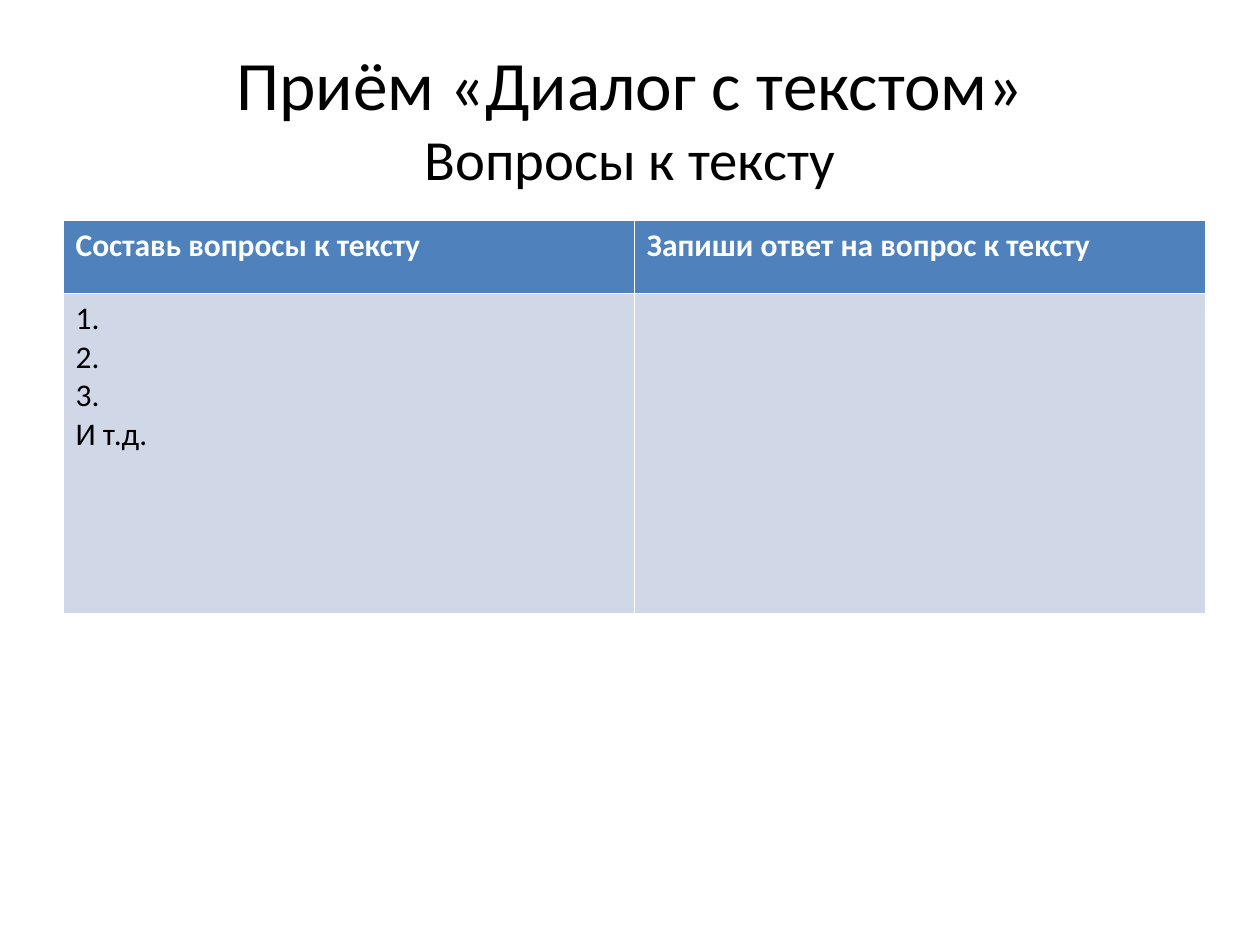
from pptx import Presentation
from pptx.dml.color import RGBColor
from pptx.enum.text import MSO_ANCHOR, MSO_AUTO_SIZE, PP_ALIGN
from pptx.util import Inches, Pt

COLORS = {
    "title": "000000",
    "header_fill": "4F81BD",
    "header_text": "FFFFFF",
    "body_fill": "D0D8E8",
    "body_text": "000000",
}
FONT = "Calibri"
WIDTH, HEIGHT = Inches(10), Inches(7.5)
MARGIN = WIDTH * 0.05
HEADINGS = ["Составь вопросы к тексту", "Запиши ответ на вопрос к тексту"]
ANSWERS = ["1.\n2.\n3.\nИ т.д.", ""]
ROW_HEIGHTS = [0.58, 2.54]


def color(name):
    return RGBColor.from_string(COLORS[name])


def style_font(font, color_name):
    font.name = FONT
    font.color.rgb = color(color_name)


def add_title(slide, lines):
    title = slide.shapes.title
    title.left, title.top = int(MARGIN), int(HEIGHT * 0.04)
    title.width, title.height = int(WIDTH * 0.9), Inches(1.25)
    frame = title.text_frame
    frame.auto_size = MSO_AUTO_SIZE.NONE
    frame.vertical_anchor = MSO_ANCHOR.MIDDLE
    heading = frame.paragraphs[0]
    heading.alignment = PP_ALIGN.CENTER
    style_font(heading.font, "title")
    for index, (words, size) in enumerate(lines):
        if index:
            heading.add_line_break()
        line = heading.add_run()
        line.text = words
        line.font.size = Pt(size)


def fill_cell(cell, words, role, bold):
    cell.fill.solid()
    cell.fill.fore_color.rgb = color(f"{role}_fill")
    cell.text = words
    for paragraph in cell.text_frame.paragraphs:
        style_font(paragraph.font, f"{role}_text")
        paragraph.font.size = Pt(18)
        paragraph.font.bold = bold


def add_question_table(slide):
    frame = slide.shapes.add_table(
        len(ROW_HEIGHTS), len(HEADINGS), int(MARGIN), Inches(1.75),
        Inches(9.07), Inches(sum(ROW_HEIGHTS)))
    questions = frame.table
    for row, height in zip(questions.rows, ROW_HEIGHTS):
        row.height = Inches(height)
    for column, (heading, answer) in enumerate(zip(HEADINGS, ANSWERS)):
        fill_cell(questions.cell(0, column), heading, "header", True)
        fill_cell(questions.cell(1, column), answer, "body", False)


def main():
    deck = Presentation()
    deck.slide_width, deck.slide_height = WIDTH, HEIGHT
    slide = deck.slides.add_slide(deck.slide_layouts.get_by_name("Title Only"))
    add_title(slide, [("Приём «Диалог с текстом»", 39.6), ("Вопросы к тексту", 32.4)])
    add_question_table(slide)
    deck.save("out.pptx")


if __name__ == "__main__":
    main()
